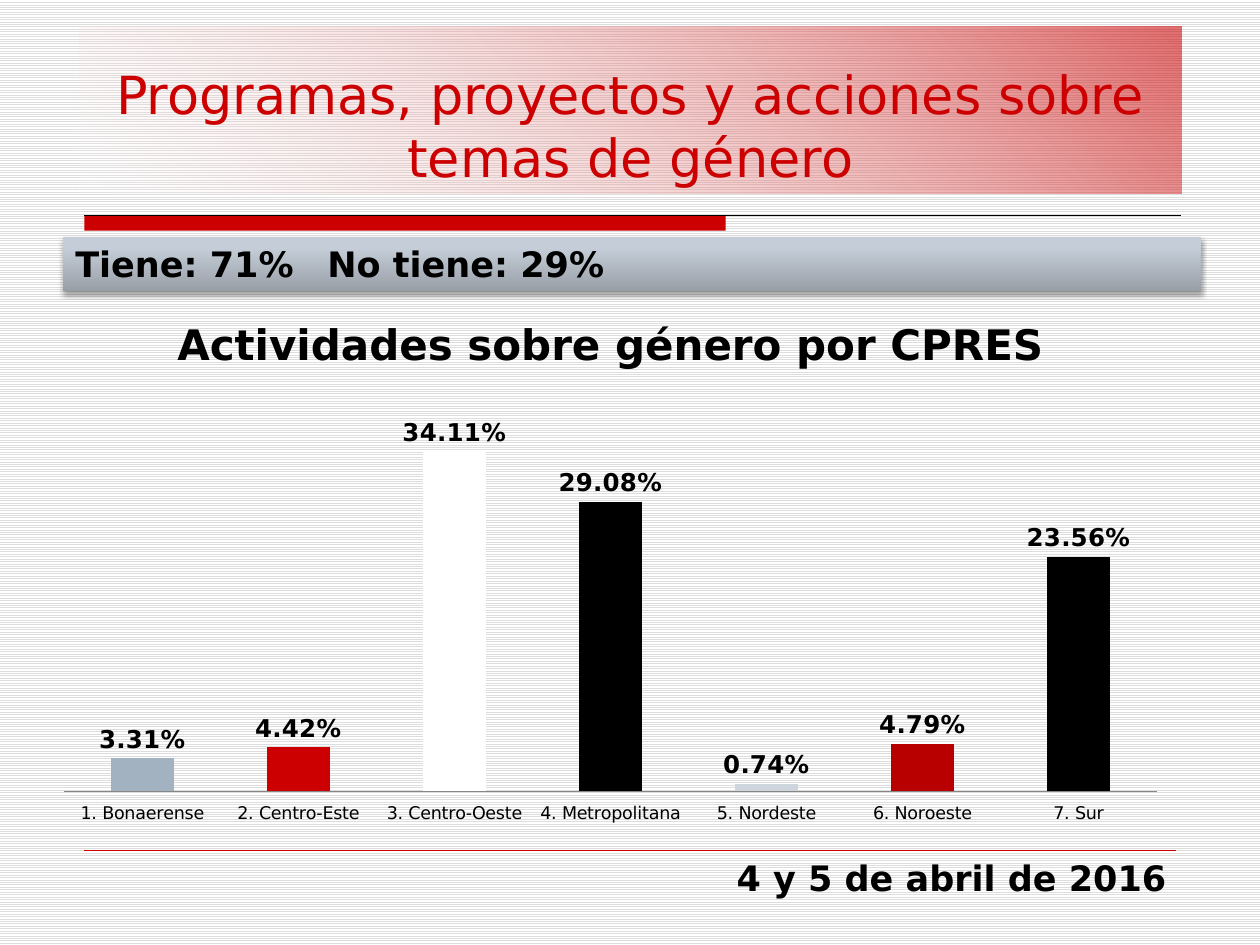
from dataclasses import dataclass

from lxml.etree import SubElement
from pptx import Presentation
from pptx.chart.data import CategoryChartData
from pptx.dml.color import RGBColor
from pptx.enum.chart import XL_CHART_TYPE as Kind, XL_LABEL_POSITION as Spot
from pptx.enum.chart import XL_TICK_LABEL_POSITION as Place, XL_TICK_MARK as Tick
from pptx.enum.dml import MSO_PATTERN as Pattern
from pptx.enum.shapes import MSO_CONNECTOR as Wire, MSO_SHAPE as Form
from pptx.enum.text import MSO_ANCHOR as Anchor, MSO_AUTO_SIZE as Fit, PP_ALIGN as Align
from pptx.oxml import parse_xml
from pptx.oxml.ns import nsdecls, qn
from pptx.util import Inches, Pt


@dataclass(frozen=True)
class Theme:
    font: str = "DejaVu Sans"
    red: str = "CC0000"
    black: str = "000000"
    white: str = "FFFFFF"
    stripe: str = "DDDDDD"
    axis: str = "868686"
    title: int = 30
    head: int = 24
    body: int = 20
    label: int = 14
    small: int = 10


THEME = Theme()
REGIONS = [
    ("1. Bonaerense", 0.0331, "A3B2C1"),
    ("2. Centro-Este", 0.0442, THEME.red),
    ("3. Centro-Oeste", 0.3411, THEME.white),
    ("4. Metropolitana", 0.2908, THEME.black),
    ("5. Nordeste", 0.0074, "CED5DD"),
    ("6. Noroeste", 0.0479, "B90000"),
    ("7. Sur", 0.2356, THEME.black),
]


def rgb(code):
    return RGBColor.from_string(code)


def box(*sides):
    return [Inches(side) for side in sides]


def style(font, size, color=THEME.black, bold=False):
    font.name = THEME.font
    font.size = Pt(size)
    font.bold = bold
    font.color.rgb = rgb(color)


def write(frame, text, size, color=THEME.black, bold=True, align=Align.LEFT):
    frame.word_wrap = True
    frame.text = text
    para = frame.paragraphs[0]
    para.alignment = align
    for run in para.runs:
        style(run.font, size, color, bold)


def blend(shape, stops, angle):
    """Fill with a gradient of (position, colour, opacity) stops, clockwise angle."""
    marks = "".join(
        f'<a:gs pos="{pos * 1000}"><a:srgbClr val="{color}">'
        f'<a:alpha val="{alpha * 1000}"/></a:srgbClr></a:gs>'
        for pos, color, alpha in stops
    )
    grad = parse_xml(
        f'<a:gradFill {nsdecls("a")} rotWithShape="1"><a:gsLst>{marks}</a:gsLst>'
        f'<a:lin ang="{angle * 60000}" scaled="0"/></a:gradFill>'
    )
    props = shape.fill._xPr
    shape.fill.background()
    props.replace(props.find(qn("a:noFill")), grad)


def cast(shape):
    """Drop a soft shadow straight down."""
    shape.shadow.inherit = False
    glow = shape._element.spPr.find(qn("a:effectLst"))
    glow.append(parse_xml(
        f'<a:outerShdw {nsdecls("a")} blurRad="{Pt(3.1)}" dist="{Pt(1.8)}" '
        'dir="5400000" rotWithShape="0"><a:srgbClr val="000000">'
        '<a:alpha val="35000"/></a:srgbClr></a:outerShdw>'
    ))


def rule(slide, left, right, top, color, width):
    line = slide.shapes.add_connector(Wire.STRAIGHT, *box(left, top, right, top))
    line.line.color.rgb = rgb(color)
    line.line.width = Pt(width)
    SubElement(line._element.spPr, qn("a:effectLst"))


def bar(slide, *sides):
    shape = slide.shapes.add_shape(Form.RECTANGLE, *box(*sides))
    shape.shadow.inherit = False
    shape.line.fill.background()
    return shape


def head(slide, text):
    title = slide.shapes.title
    title.left, title.top, title.width, title.height = box(0.63, 0.21, 8.75, 1.33)
    blend(title, [(0, THEME.white, 16), (100, THEME.red, 57)], 315)
    frame = title.text_frame
    frame.auto_size = Fit.NONE
    frame.vertical_anchor = Anchor.BOTTOM
    write(frame, text, THEME.title, THEME.red, False, Align.CENTER)


def totals(slide, text):
    band = bar(slide, 0.5, 1.88, 9.03, 0.43)
    blend(band, [(0, "989FA7", 100), (80, "C5CED8", 100), (100, "C6CFDA", 100)], 270)
    cast(band)
    frame = band.text_frame
    props = frame.paragraphs[0]._p.get_or_add_pPr()
    tabs = SubElement(props, qn("a:tabLst"))
    SubElement(tabs, qn("a:tab"), pos=str(Inches(4.35)), algn="l")
    write(frame, text, THEME.body)


def footer(slide, text):
    note = slide.shapes.add_textbox(*box(0.33, 6.75, 9.03, 0.43))
    write(note.text_frame, text, THEME.body, align=Align.RIGHT)


def inset(chart, **parts):
    """Fix the inner plot area as fractions of the chart."""
    area = chart._chartSpace.chart.plotArea
    old = area.find(qn("c:layout"))
    if old is not None:
        area.remove(old)
    rows = "".join(f'<c:{key} val="{val}"/>' for key, val in parts.items())
    area.insert(0, parse_xml(
        f'<c:layout {nsdecls("c")}><c:manualLayout><c:layoutTarget val="inner"/>'
        f'<c:xMode val="edge"/><c:yMode val="edge"/>{rows}</c:manualLayout></c:layout>'
    ))


def columns(slide, text):
    names, shares, colors = zip(*REGIONS)
    data = CategoryChartData(number_format="0.00%")
    data.categories = names
    data.add_series("Series 1", shares)
    frame = slide.shapes.add_chart(Kind.COLUMN_CLUSTERED, *box(0.33, 2.31, 9.03, 4.27), data)
    chart = frame.chart
    style(chart.font, THEME.small)
    chart.has_legend = False
    chart.has_title = True
    write_title = chart.chart_title.text_frame
    write_title.text = text
    style(write_title.paragraphs[0].runs[0].font, THEME.head, bold=True)
    inset(chart, x=0.02, y=0.19, w=0.96, h=0.74)

    chart.value_axis.visible = False
    chart.value_axis.has_major_gridlines = False
    chart.value_axis.minimum_scale = 0
    chart.value_axis.maximum_scale = 0.4
    axis = chart.category_axis
    axis.major_tick_mark = Tick.NONE
    axis.tick_label_position = Place.LOW
    axis.format.line.color.rgb = rgb(THEME.axis)

    plot = chart.plots[0]
    plot.gap_width = 150
    plot.vary_by_categories = False
    for point, color in enumerate(colors):
        fill = plot.series[0].points[point].format.fill
        fill.solid()
        fill.fore_color.rgb = rgb(color)
    plot.has_data_labels = True
    labels = plot.data_labels
    labels.show_value = True
    labels.number_format = "0.00%"
    labels.number_format_is_linked = False
    labels.position = Spot.OUTSIDE_END
    style(labels.font, THEME.label, bold=True)


def main():
    deck = Presentation()
    deck.slide_width, deck.slide_height = box(10, 7.5)
    slide = deck.slides.add_slide(deck.slide_layouts[5])
    back = slide.background.fill
    back.patterned()
    back.pattern = Pattern.LIGHT_HORIZONTAL
    back.fore_color.rgb = rgb(THEME.stripe)
    back.back_color.rgb = rgb(THEME.white)

    head(slide, "Programas, proyectos y acciones sobre temas de género")
    accent = bar(slide, 0.67, 1.71, 5.09, 0.12)
    accent.fill.solid()
    accent.fill.fore_color.rgb = rgb(THEME.red)
    rule(slide, 0.67, 9.37, 1.71, THEME.black, 0.75)
    rule(slide, 0.67, 9.33, 6.75, THEME.red, 0.25)
    footer(slide, "4 y 5 de abril de 2016")
    totals(slide, "Tiene: 71%\tNo tiene: 29%")
    columns(slide, "Actividades sobre género por CPRES")
    deck.save("out.pptx")


if __name__ == "__main__":
    main()
